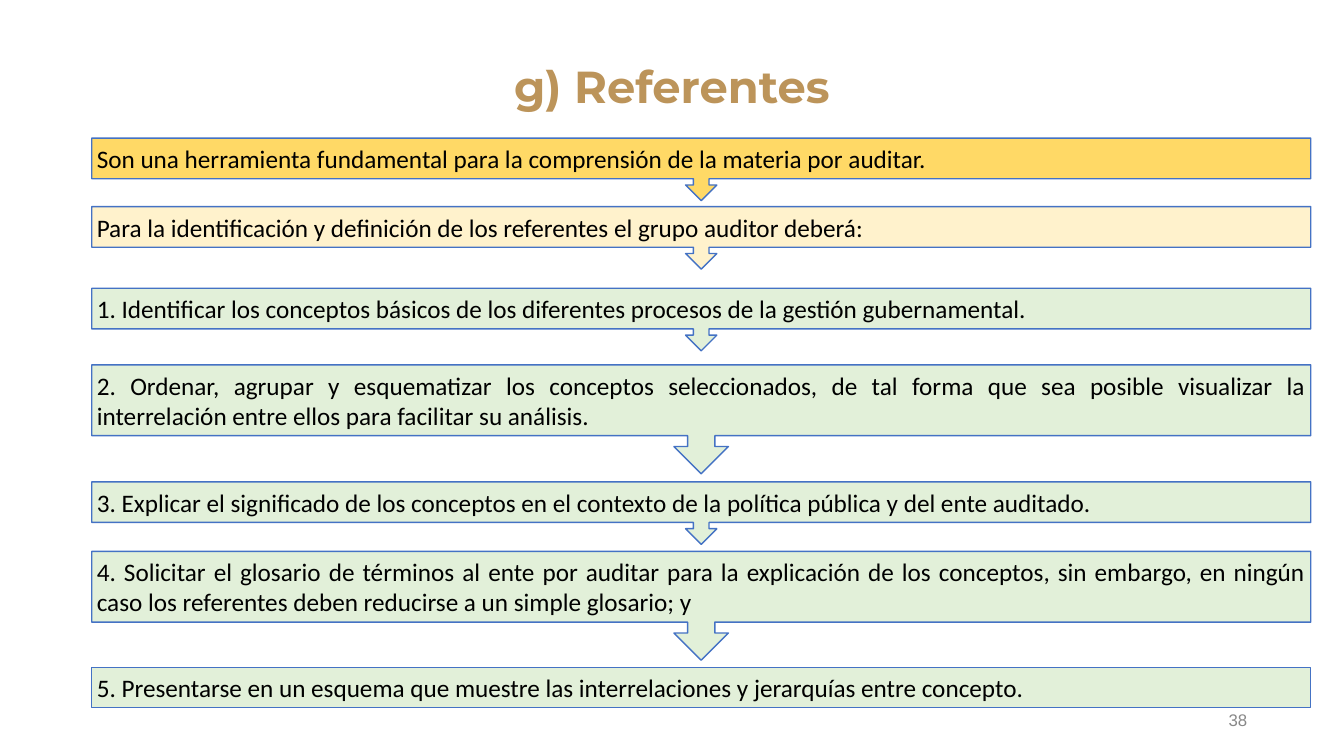
import pptx
import pptx.util
from pptx.dml.color import RGBColor
from pptx.enum.shapes import MSO_SHAPE
from pptx.enum.text import MSO_ANCHOR, PP_ALIGN

GOLD = RGBColor(0xBC, 0x94, 0x5A)
GREY = RGBColor(0x88, 0x88, 0x88)
BLACK = RGBColor(0, 0, 0)
BLUE = RGBColor(0x44, 0x72, 0xC4)
AMBER = RGBColor(0xFF, 0xD9, 0x66)
CREAM = RGBColor(0xFF, 0xF2, 0xCC)
GREEN = RGBColor(0xE2, 0xF0, 0xD9)

# Content: lengths in px, 100 px to the inch
TITLE = "g) Referentes"
PAGE_NUMBER = "38"
ARROW, PLAIN = MSO_SHAPE.DOWN_ARROW_CALLOUT, MSO_SHAPE.RECTANGLE
STEPS = [  # top, height, shape, fill, text
    (137, 62, ARROW, AMBER, "Son una herramienta fundamental para la comprensión de la materia por auditar."),
    (205, 62, ARROW, CREAM, "Para la identificación y definición de los referentes el grupo auditor deberá:"),
    (286, 62, ARROW, GREEN, "1. Identificar los conceptos básicos de los diferentes procesos de la "
                            "gestión gubernamental."),
    (362, 108, ARROW, GREEN, "2. Ordenar, agrupar y esquematizar los conceptos seleccionados, de tal forma "
                             "que sea posible visualizar la interrelación entre ellos para facilitar su análisis."),
    (478, 62, ARROW, GREEN, "3. Explicar el significado de los conceptos en el contexto de la política "
                            "pública y del ente auditado."),
    (547, 108, ARROW, GREEN, "4. Solicitar el glosario de términos al ente por auditar para la explicación "
                             "de los conceptos, sin embargo, en ningún caso los referentes deben reducirse "
                             "a un simple glosario; y"),
    (662, 40, PLAIN, GREEN, "5. Presentarse en un esquema que muestre las interrelaciones y jerarquías "
                            "entre concepto."),
]
STEP_LEFT, STEP_WIDTH = 91, 1209
INSET = 5

TITLE_FONT = {"name": "Montserrat", "size": pptx.util.Pt(32), "bold": True}
NUMBER_FONT = {"name": "Arial", "size": pptx.util.Pt(12)}
STEP_FONT = {"name": "Calibri", "size": pptx.util.Pt(18)}


def px(length):
    return pptx.util.Emu(length * 9144)


def write(box, text, font, color, align, anchor, wrap=True):
    frame = box.text_frame
    margins = {f"margin_{side}": px(INSET) for side in ("left", "top", "right", "bottom")}
    for key, value in {**margins, "word_wrap": wrap, "vertical_anchor": anchor}.items():
        setattr(frame, key, value)
    para = frame.paragraphs[0]
    para.alignment = align
    span = para.add_run()
    span.text = text
    for key, value in font.items():
        setattr(span.font, key, value)
    span.font.color.rgb = color
    return para


deck = pptx.Presentation()
deck.slide_width, deck.slide_height = px(1333), px(750)
page = deck.slides.add_slide(deck.slide_layouts[6])

# Title and page number
title = page.shapes.add_textbox(px(91), px(50), px(1151), px(67))
heading = write(title, TITLE, TITLE_FONT, GOLD, PP_ALIGN.CENTER, MSO_ANCHOR.BOTTOM)
heading.line_spacing = 0.9
number = page.shapes.add_textbox(px(1213), px(700), px(29), px(29))
write(number, PAGE_NUMBER, NUMBER_FONT, GREY, PP_ALIGN.RIGHT, MSO_ANCHOR.MIDDLE, wrap=False)

# Chain of steps
for top, height, kind, fill, text in STEPS:
    step = page.shapes.add_shape(kind, px(STEP_LEFT), px(top), px(STEP_WIDTH), px(height))
    step.shadow.inherit = False
    step.fill.solid()
    step.fill.fore_color.rgb = fill
    step.line.color.rgb = BLUE
    step.line.width = pptx.util.Pt(1)
    write(step, text, STEP_FONT, BLACK, PP_ALIGN.JUSTIFY, MSO_ANCHOR.MIDDLE)

deck.save("out.pptx")
